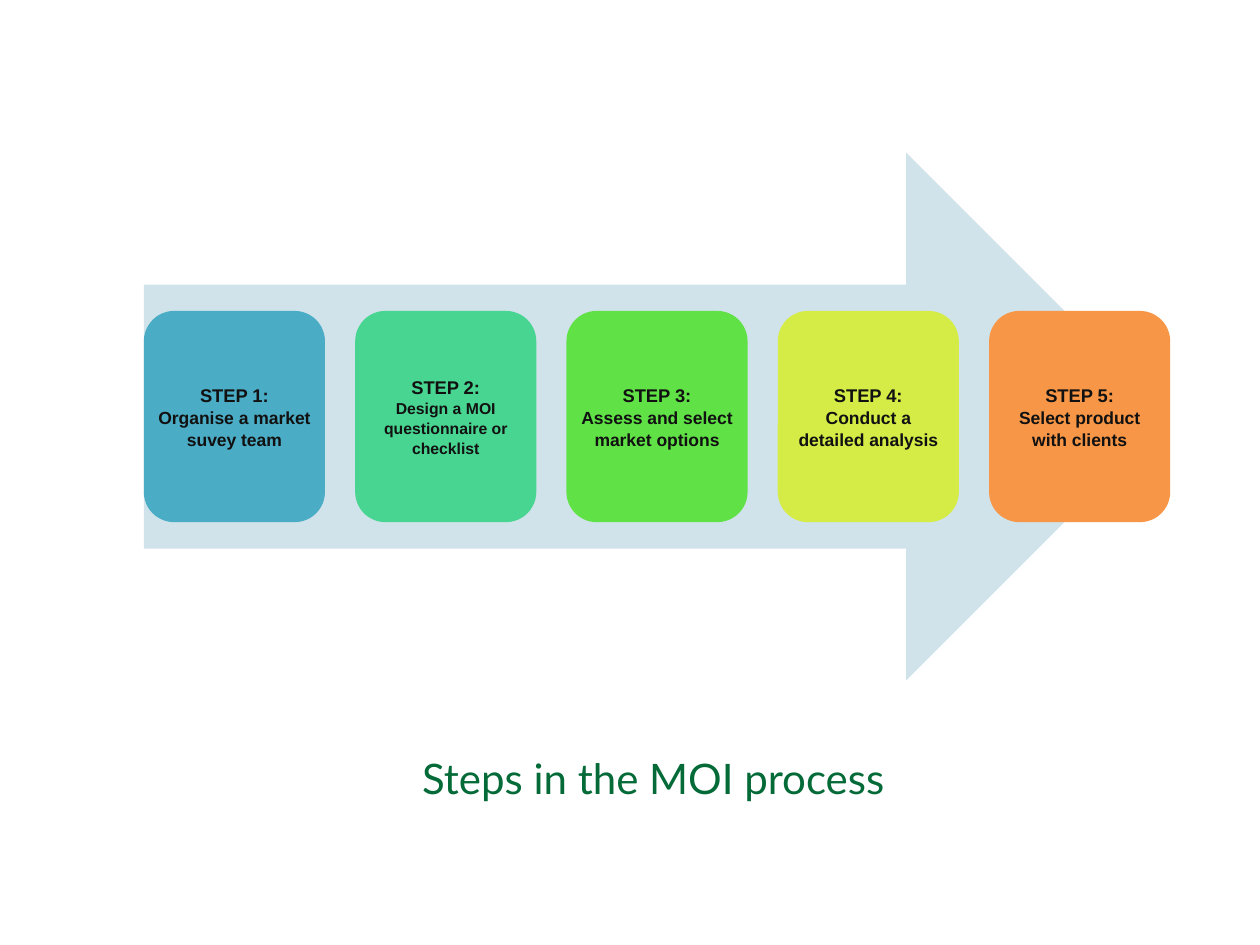
import pptx
import pptx.util
import pptx.dml.color
import pptx.enum.shapes
import pptx.enum.text

Pt = pptx.util.Pt
SHAPE = pptx.enum.shapes.MSO_SHAPE
ALIGN = pptx.enum.text.PP_ALIGN
ANCHOR = pptx.enum.text.MSO_ANCHOR

COLORS = {
    "title": "046A38",
    "text": "111111",
    "arrow": "D0E3EA",
    "blue": "4BACC6",
    "teal": "48D491",
    "green": "60E146",
    "yellow": "D5EC46",
    "orange": "F79646",
}

# Fill, description and description size of each step
STEPS = [
    ("blue", "Organise a market suvey team", 10),
    ("teal", "Design a MOI questionnaire or checklist", 9),
    ("green", "Assess and select market options", 10),
    ("yellow", "Conduct a detailed analysis", 10),
    ("orange", "Select product with clients", 10),
]


class ProcessSlide:
    def __init__(self, page):
        self.page = page
        self.body_font = "Arial"
        self.title_font = "Lato"
        self.card_inset = 3.2

    def color(self, name):
        return pptx.dml.color.RGBColor.from_string(COLORS[name])

    def format_para(self, para, font, size, color, bold, align):
        para.alignment = align
        for span in para.runs:
            span.font.name = font
            span.font.size = Pt(size)
            span.font.bold = bold
            span.font.color.rgb = self.color(color)

    def title(self, text, left, top, width, height):
        box = self.page.shapes.title
        box.left, box.top = Pt(left), Pt(top)
        box.width, box.height = Pt(width), Pt(height)
        frame = box.text_frame
        frame.text = text
        frame.word_wrap = True
        frame.vertical_anchor = ANCHOR.BOTTOM
        self.format_para(frame.paragraphs[0], self.title_font, 24,
                         "title", False, ALIGN.LEFT)

    def shape(self, kind, fill, left, top, width, height):
        shape = self.page.shapes.add_shape(
            kind, Pt(left), Pt(top), Pt(width), Pt(height))
        shape.shadow.inherit = False
        shape.fill.solid()
        shape.fill.fore_color.rgb = self.color(fill)
        shape.line.fill.background()
        return shape

    def card(self, heading, detail, detail_size, fill, left, top, width, height):
        card = self.shape(SHAPE.ROUNDED_RECTANGLE, fill,
                          left, top, width, height)
        frame = card.text_frame
        frame.word_wrap = True
        frame.vertical_anchor = ANCHOR.MIDDLE
        frame.margin_left = frame.margin_right = Pt(self.card_inset)
        frame.margin_top = frame.margin_bottom = Pt(self.card_inset)
        frame.text = f"{heading}\n{detail}"
        for para, size in zip(frame.paragraphs, (10.5, detail_size)):
            para.line_spacing = 1.04
            self.format_para(para, self.body_font, size,
                             "text", True, ALIGN.CENTER)


def main():
    deck = pptx.Presentation()
    deck.slide_width, deck.slide_height = Pt(720), Pt(540)
    slide = ProcessSlide(deck.slides.add_slide(deck.slide_layouts[5]))

    # Title under the diagram
    slide.title("Steps in the MOI process", 234, 417.6, 283.7, 44.6)

    # Arrow behind the steps
    left, top, width, height = 82.2, 87.2, 586.5, 301.7
    slide.shape(SHAPE.RIGHT_ARROW, "arrow", left, top, width, height)

    # Step cards, spread evenly over the arrow and centred on its axis
    card_width, card_height = 103.5, 120.7
    pitch = (width - card_width) / (len(STEPS) - 1)
    card_top = top + (height - card_height) / 2
    for index, (fill, detail, size) in enumerate(STEPS):
        slide.card(f"STEP {index + 1}:", detail, size, fill,
                   left + index * pitch, card_top, card_width, card_height)

    deck.save("out.pptx")


if __name__ == "__main__":
    main()
